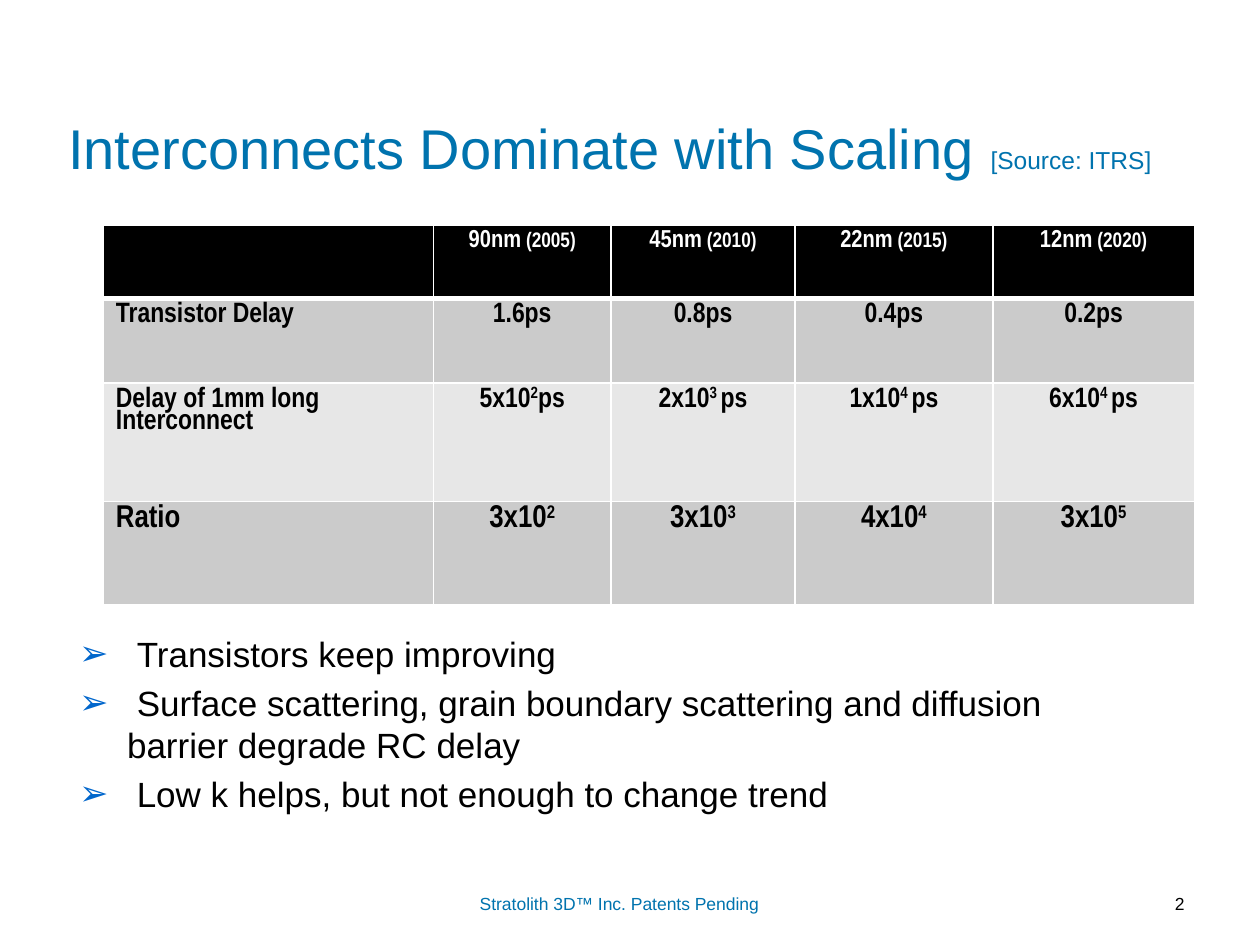
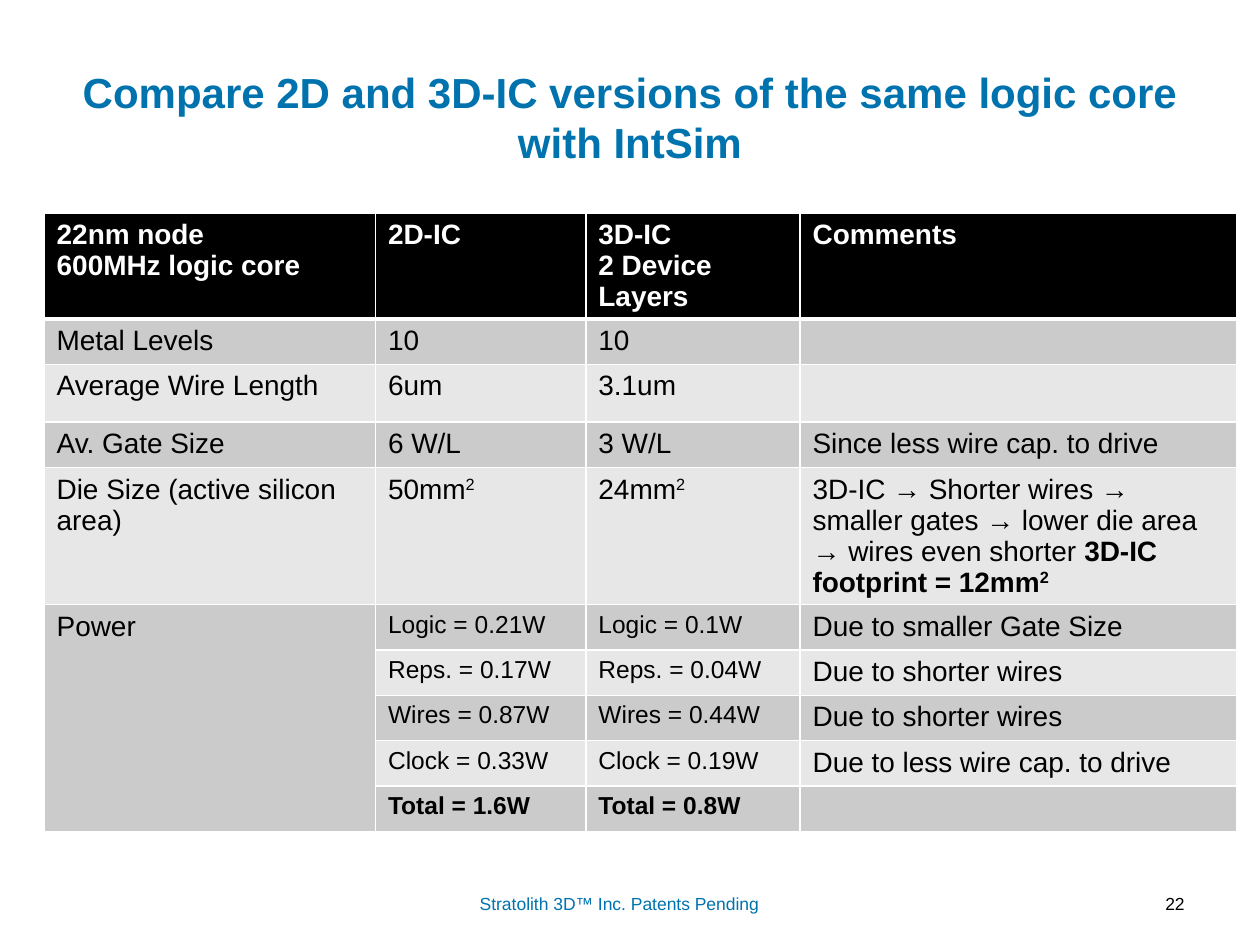
from lxml.etree import SubElement as Sub
from pptx import Presentation
from pptx.dml.color import RGBColor as RGB
from pptx.enum.text import MSO_ANCHOR as Anchor, PP_ALIGN as Align
from pptx.oxml.ns import qn
from pptx.util import Inches, Pt

HUE = {
    "blue": "0073AE",
    "mark": "0066CC",
    "head": "000000",
    "text": "000000",
    "dark": "CBCBCB",
    "light": "E7E7E7",
    "white": "FFFFFF",
}
COLS, ROWS = 100, 75
WIDE, HIGH = Inches(10), Inches(7.5)
FOOT = "Stratolith 3D™ Inc. Patents Pending"


def across(n):
    return round(WIDE * n / COLS)


def down(n):
    return round(HIGH * n / ROWS)


def place(box):
    x, y, w, h = box
    return across(x), down(y), across(w), down(h)


def put(par, text, size, hue="text", bold=False, face="Arial"):
    for i, part in enumerate(text.split("^")):
        if not part:
            continue
        run = par.add_run()
        run.text = part
        font = run.font
        font.name, font.size, font.bold = face, Pt(size), bold
        font.color.rgb = RGB.from_string(HUE[hue])
        if i % 2:
            font._element.set("baseline", "30000")


def frame(slide, box):
    text = slide.shapes.add_textbox(*place(box)).text_frame
    text.word_wrap = True
    return text


def title(slide, box, runs, align, bold=False):
    shape = slide.shapes.title
    shape.left, shape.top, shape.width, shape.height = place(box)
    text = shape.text_frame
    text.word_wrap = True
    text.vertical_anchor = Anchor.MIDDLE
    par = text.paragraphs[0]
    par.alignment = align
    for words, size in runs:
        put(par, words, size, "blue", bold)


def footer(slide, num):
    parts = (
        ((33.3, 70.4, 31.7, 2.6), FOOT, "blue", Align.CENTER),
        ((83.9, 70.35, 11.1, 3.3), num, "text", Align.RIGHT),
    )
    for box, words, hue, align in parts:
        par = frame(slide, box).paragraphs[0]
        par.alignment = align
        put(par, words, 10, hue)


def bullets(slide, box, lines):
    text = frame(slide, box)
    for i, line in enumerate(lines):
        par = text.paragraphs[0] if i == 0 else text.add_paragraph()
        if i:
            par.space_before = Pt(4)
        props = par._p.get_or_add_pPr()
        props.set("marL", str(across(3.8)))
        props.set("indent", str(-across(3.8)))
        tint = Sub(props, qn("a:buClr"))
        Sub(tint, qn("a:srgbClr"), val=HUE["mark"])
        Sub(props, qn("a:buFont"), typeface="Arial")
        Sub(props, qn("a:buChar"), char="➢")
        put(par, " ", 20, "mark")
        put(par, line, 20)


def border(cell, row):
    props = cell._tc.get_or_add_tcPr()
    for side in "LRTB":
        thick = (row, side) in ((0, "B"), (1, "T"))
        line = Sub(props, qn(f"a:ln{side}"), w=str(Pt(3 if thick else 1)))
        fill = Sub(line, qn("a:solidFill"))
        Sub(fill, qn("a:srgbClr"), val=HUE["white"])


def table(slide, spot, cols, rows, data, style):
    box = (*spot, sum(cols), sum(rows))
    grid = slide.shapes.add_table(len(rows), len(cols), *place(box)).table
    for col, wide in zip(grid.columns, cols):
        col.width = across(wide)
    for row, high in zip(grid.rows, rows):
        row.height = down(high)
    for r, line in enumerate(data):
        shade = "head" if r == 0 else "dark" if r % 2 else "light"
        for c, words in enumerate(line):
            cell = grid.cell(r, c)
            border(cell, r)
            cell.fill.solid()
            cell.fill.fore_color.rgb = RGB.from_string(HUE[shade])
            text = cell.text_frame
            for i, item in enumerate(words.split("\n")):
                par = text.paragraphs[0] if i == 0 else text.add_paragraph()
                style(par, r, c, item)
            if not words:
                Sub(par._p, qn("a:endParaRPr"), sz="1400")
    return grid


def trend(par, r, c, words):
    par.line_spacing = 0.85
    par.alignment = Align.CENTER if c else Align.LEFT
    look = {"bold": True, "face": "Arial Narrow"}
    if r == 0:
        node, gap, year = words.partition(" ")
        put(par, node, 14, "white", **look)
        put(par, gap + year, 12, "white", **look)
    else:
        put(par, words, 18 if r == 3 else 16, **look)


def versus(par, r, c, words):
    size = 14 if r >= 5 and c in (1, 2) else 16
    plain, _, strong = words.partition("*")
    hue = "text" if r else "white"
    put(par, plain, size, hue, r in (0, 9))
    put(par, strong, size, hue, True)


def scaling(slide):
    title(slide, (4.4, 5.4, 90, 12.5),
          [("Interconnects Dominate with Scaling ", 32), ("[Source: ITRS]", 14)],
          Align.LEFT)
    data = [
        ["", "90nm (2005)", "45nm (2010)", "22nm (2015)", "12nm (2020)"],
        ["Transistor Delay", "1.6ps", "0.8ps", "0.4ps", "0.2ps"],
        ["Delay of 1mm long Interconnect", "5x10^2^ps", "2x10^3 ^ps",
         "1x10^4 ^ps", "6x10^4 ^ps"],
        ["Ratio", "3x10^2", "3x10^3", "4x10^4", "3x10^5"],
    ]
    table(slide, (8.2, 17.9), (26.2, 14.1, 14.6, 15.7, 16),
          (5.8, 6.7, 9.4, 8.2), data, trend)
    bullets(slide, (5.3, 49.7, 86.1, 17.4), [
        "Transistors keep improving",
        "Surface scattering, grain boundary scattering and diffusion "
        "barrier degrade RC delay",
        "Low k helps, but not enough to change trend",
    ])
    footer(slide, "2")


def compare(slide):
    title(slide, (5, 3, 90, 12.5),
          [("Compare 2D and 3D-IC versions of the same logic core with IntSim", 24)],
          Align.CENTER, True)
    data = [
        ["22nm node\n600MHz logic core", "2D-IC", "3D-IC\n2 Device Layers",
         "Comments"],
        ["Metal Levels", "10", "10", ""],
        ["Average Wire Length", "6um", "3.1um", ""],
        ["Av. Gate Size", "6 W/L", "3 W/L", "Since less wire cap. to drive"],
        ["Die Size (active silicon area)", "50mm^2", "24mm^2",
         "3D-IC → Shorter wires → smaller gates → lower die area → "
         "wires even shorter *3D-IC footprint = 12mm^2"],
        ["Power", "Logic = 0.21W", "Logic = 0.1W", "Due to smaller Gate Size"],
        ["", "Reps. = 0.17W", "Reps. = 0.04W", "Due to shorter wires"],
        ["", "Wires = 0.87W", "Wires = 0.44W", "Due to shorter wires"],
        ["", "Clock = 0.33W", "Clock = 0.19W", "Due to less wire cap. to drive"],
        ["", "Total = 1.6W", "Total = 0.8W", ""],
    ]
    rows = (6.3, 3.6, 4.6, 3.6, 9) + (3.6,) * 5
    grid = table(slide, (3.5, 16.9), (26.3, 16.7, 17, 34.7), rows, data, versus)
    grid.cell(5, 0).merge(grid.cell(9, 0))
    footer(slide, "22")


def main():
    deck = Presentation()
    deck.slide_width, deck.slide_height = WIDE, HIGH
    for build in (scaling, compare):
        build(deck.slides.add_slide(deck.slide_layouts[5]))
    deck.save("out.pptx")


if __name__ == "__main__":
    main()
